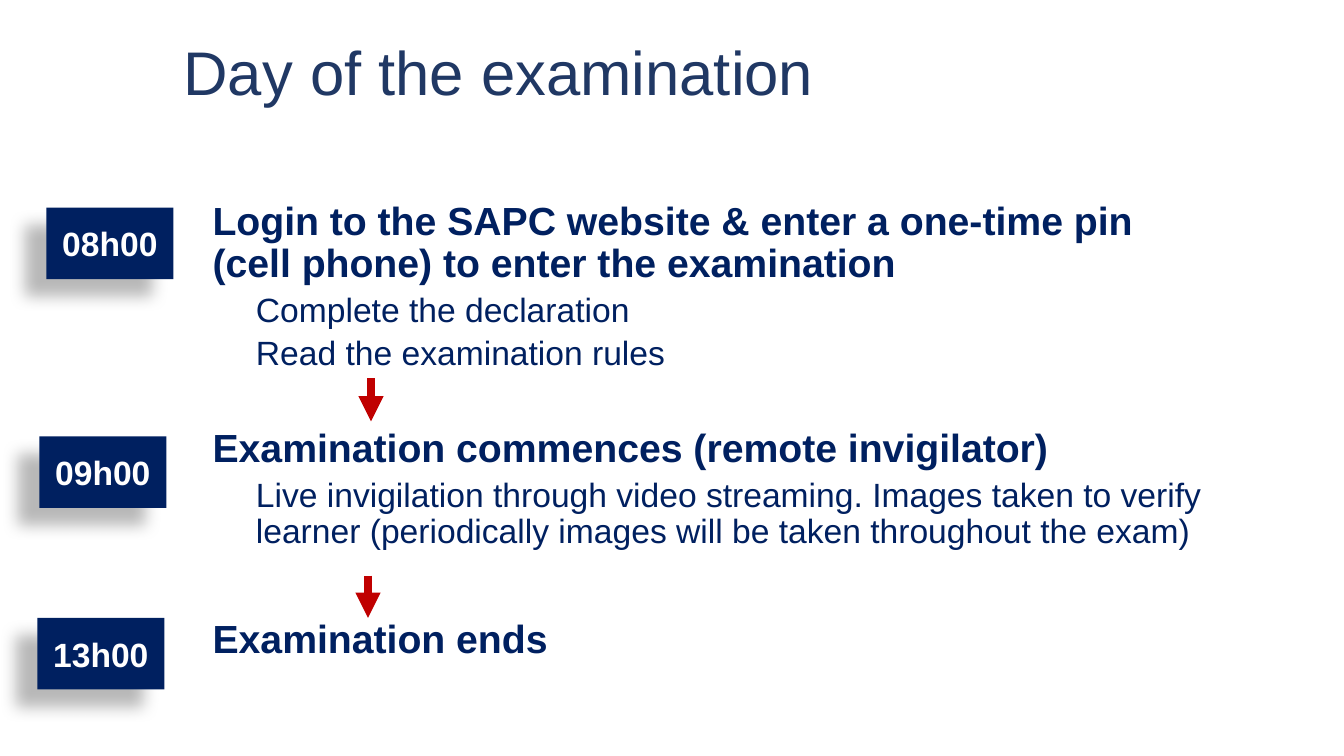
from dataclasses import dataclass
from typing import Any

from lxml import etree
from pptx import Presentation
from pptx.dml.color import RGBColor
from pptx.enum.shapes import MSO_CONNECTOR, MSO_SHAPE
from pptx.enum.text import MSO_ANCHOR, PP_ALIGN
from pptx.oxml import parse_xml
from pptx.oxml.ns import nsdecls, qn
from pptx.util import Inches, Pt

RECTANGLE = MSO_SHAPE.RECTANGLE
STRAIGHT = MSO_CONNECTOR.STRAIGHT
MIDDLE, TOP = MSO_ANCHOR.MIDDLE, MSO_ANCHOR.TOP
LEFT, CENTER = PP_ALIGN.LEFT, PP_ALIGN.CENTER


@dataclass(frozen=True)
class Theme:
    font: str = "Arial"
    navy: str = "002060"
    title_blue: str = "203864"
    red: str = "C00000"
    white: str = "FFFFFF"
    title_size: int = 44
    heading_size: int = 28
    detail_size: int = 24
    arrow_width: int = 6


@dataclass(frozen=True)
class Step:
    text: str
    level: int = 0
    space_before: int = 0


@dataclass(frozen=True)
class TimeLabel:
    text: str
    left: float
    top: float


@dataclass(frozen=True)
class DownArrow:
    x: float
    top: float
    bottom: float


THEME = Theme()
INDENTS = (0.07, 0.5)
LABEL_WIDTH, LABEL_HEIGHT = 1.26, 0.71

STEPS = (
    Step("Login to the SAPC website & enter a one-time pin (cell phone) "
         "to enter the examination"),
    Step("Complete the declaration", 1, 5),
    Step("Read the examination rules", 1, 5),
    Step("Examination commences (remote invigilator)", 0, 40),
    Step("Live invigilation through video streaming. Images taken to verify "
         "learner (periodically images will be taken throughout the exam)", 1, 5),
    Step("Examination ends", 0, 49),
)
TIME_LABELS = (
    TimeLabel("08h00", 0.46, 2.06),
    TimeLabel("09h00", 0.39, 4.33),
    TimeLabel("13h00", 0.37, 6.13),
)
ARROWS = (DownArrow(3.68, 3.75, 4.18), DownArrow(3.65, 5.71, 6.13))


def set_values(target: Any, values: dict[str, Any]) -> None:
    for name, value in values.items():
        setattr(target, name, value)


def format_font(paragraph: Any, size: int, color: str, bold: bool = False) -> None:
    set_values(paragraph.font, {"name": THEME.font, "size": Pt(size), "bold": bold})
    paragraph.font.color.rgb = RGBColor.from_string(color)


def add_title(slide: Any, text: str) -> None:
    title = slide.shapes.title
    set_values(title, {"left": Inches(1.72), "top": Inches(0.32),
                       "width": Inches(10.86), "height": Inches(0.85)})
    set_values(title.text_frame, {"text": text, "vertical_anchor": MIDDLE,
                                  "word_wrap": True})
    paragraph = title.text_frame.paragraphs[0]
    set_values(paragraph, {"alignment": LEFT, "line_spacing": 0.9})
    format_font(paragraph, THEME.title_size, THEME.title_blue)


def add_steps(slide: Any, steps: tuple[Step, ...]) -> None:
    text_box = slide.shapes.add_textbox(
        Inches(1.94), Inches(1.95), Inches(10.2), Inches(5.5))
    frame = text_box.text_frame
    set_values(frame, {"word_wrap": True, "vertical_anchor": TOP})
    for index, step in enumerate(steps):
        paragraph = frame.add_paragraph() if index else frame.paragraphs[0]
        set_values(paragraph, {"text": step.text, "level": step.level,
                               "line_spacing": 0.9,
                               "space_before": Pt(step.space_before)})
        properties = paragraph._p.get_or_add_pPr()
        properties.set("marL", str(Inches(INDENTS[step.level])))
        properties.set("indent", "0")
        is_heading = step.level == 0
        size = THEME.heading_size if is_heading else THEME.detail_size
        format_font(paragraph, size, THEME.navy, is_heading)


def add_shadow(shape: Any) -> None:
    shape.shadow.inherit = False
    effects = shape._element.spPr.find(qn("a:effectLst"))
    effects.append(parse_xml(
        f'<a:outerShdw {nsdecls("a")} blurRad="{Pt(11.8)}" dist="{Pt(19.7)}" '
        f'dir="{141 * 60000}" algn="ctr" rotWithShape="0">'
        '<a:srgbClr val="000000"><a:alpha val="28000"/></a:srgbClr></a:outerShdw>'))


def add_time_label(slide: Any, label: TimeLabel) -> None:
    shape = slide.shapes.add_shape(
        RECTANGLE, Inches(label.left), Inches(label.top),
        Inches(LABEL_WIDTH), Inches(LABEL_HEIGHT))
    shape.fill.solid()
    shape.fill.fore_color.rgb = RGBColor.from_string(THEME.navy)
    shape.line.fill.background()
    add_shadow(shape)
    set_values(shape.text_frame, {"text": label.text, "vertical_anchor": MIDDLE,
                                  "word_wrap": True})
    paragraph = shape.text_frame.paragraphs[0]
    paragraph.alignment = CENTER
    format_font(paragraph, THEME.detail_size, THEME.white, True)


def add_arrow(slide: Any, arrow: DownArrow) -> None:
    connector = slide.shapes.add_connector(
        STRAIGHT, Inches(arrow.x), Inches(arrow.top),
        Inches(arrow.x), Inches(arrow.bottom))
    connector.line.color.rgb = RGBColor.from_string(THEME.red)
    connector.line.width = Pt(THEME.arrow_width)
    line = connector.line._get_or_add_ln()
    etree.SubElement(line, qn("a:tailEnd"), type="triangle")
    etree.SubElement(connector._element.spPr, qn("a:effectLst"))


def main() -> None:
    presentation = Presentation()
    set_values(presentation, {"slide_width": Inches(13.33),
                              "slide_height": Inches(7.5)})
    slide = presentation.slides.add_slide(presentation.slide_layouts[5])
    add_title(slide, "Day of the examination")
    add_steps(slide, STEPS)
    for label in TIME_LABELS:
        add_time_label(slide, label)
    for arrow in ARROWS:
        add_arrow(slide, arrow)
    presentation.save("out.pptx")


if __name__ == "__main__":
    main()
